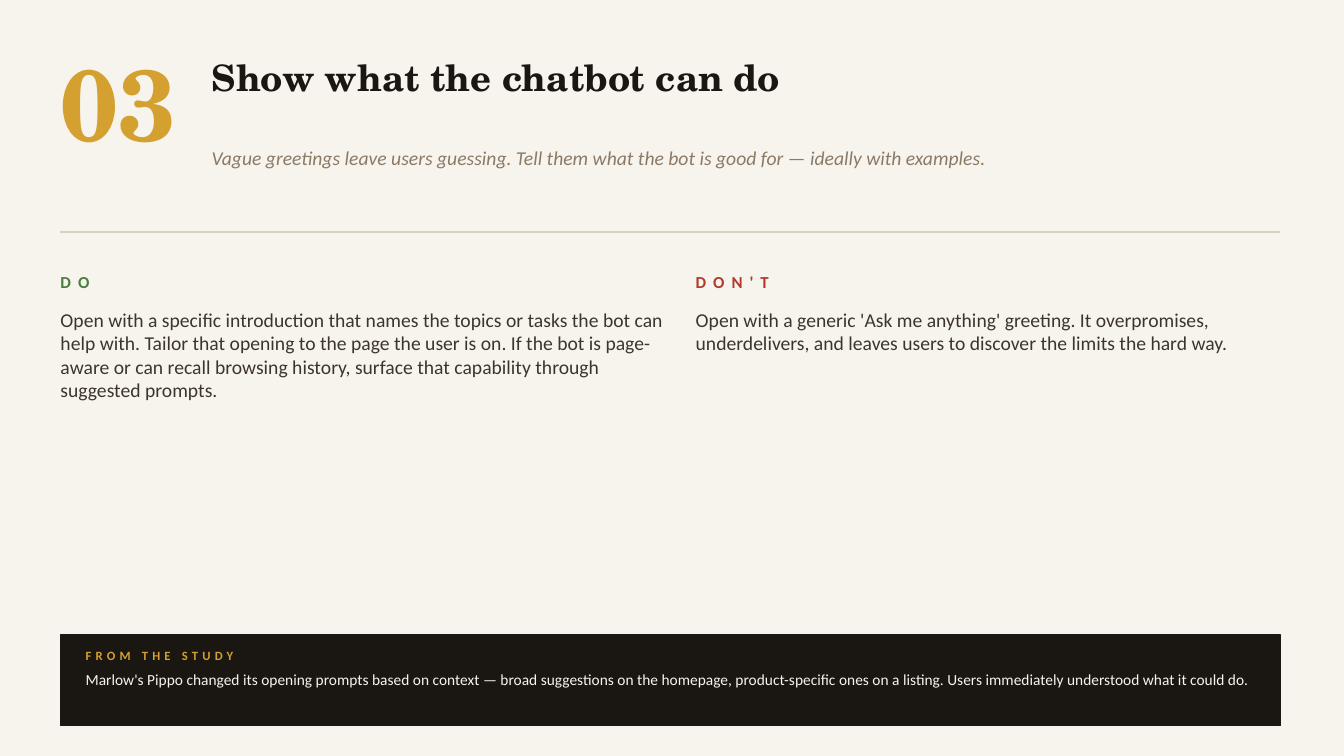
from dataclasses import dataclass

from lxml import etree
from pptx import Presentation
from pptx.dml.color import RGBColor
from pptx.enum import shapes, text
from pptx.oxml import ns
from pptx.util import Inches, Pt

CREAM = RGBColor(0xF7, 0xF4, 0xEE)
INK = RGBColor(0x1A, 0x16, 0x12)
GOLD = RGBColor(0xD4, 0xA0, 0x30)
TAUPE = RGBColor(0x8A, 0x7A, 0x66)
RULE = RGBColor(0xD8, 0xCF, 0xC0)
BROWN = RGBColor(0x3D, 0x35, 0x2D)
GREEN = RGBColor(0x4A, 0x7D, 0x3F)
RED = RGBColor(0xB3, 0x3A, 0x2A)

SERIF = "TeX Gyre Schola"
SANS = "Calibri"
MARGIN = 0.6
HEADING_LEFT = 2.1
CONTENT_WIDTH = 12.1
COLUMN_WIDTH = 6
COLUMN_STEP = 6.3
STUDY_LEFT = 0.85


@dataclass(frozen=True)
class Advice:
    label: str
    color: RGBColor
    body: str
    label_idx: int
    body_idx: int


ADVICE = (
    Advice("DO", GREEN,
           "Open with a specific introduction that names the topics or tasks the bot can "
           "help with. Tailor that opening to the page the user is on. If the bot is "
           "page-aware or can recall browsing history, surface that capability through "
           "suggested prompts.", 1, 2),
    Advice("DON'T", RED,
           "Open with a generic 'Ask me anything' greeting. It overpromises, "
           "underdelivers, and leaves users to discover the limits the hard way.", 3, 4),
)


def write(slide, words: str, left: float, top: float, width: float, height: float, *,
          size: float, color: RGBColor, font: str = SANS, bold: bool = False,
          italic: bool = False, tracking: float = 0, after: float = 0,
          middle: bool = False, holder=None) -> None:
    """Put formatted text in the given placeholder, or in a new text box."""
    area = [Inches(length) for length in (left, top, width, height)]
    if holder is None:
        holder = slide.shapes.add_textbox(*area)
    else:
        holder.left, holder.top, holder.width, holder.height = area

    frame = holder.text_frame
    frame.margin_left = frame.margin_right = frame.margin_top = frame.margin_bottom = 0
    frame.word_wrap = True
    frame.auto_size = text.MSO_AUTO_SIZE.NONE
    frame.vertical_anchor = text.MSO_ANCHOR.MIDDLE if middle else text.MSO_ANCHOR.TOP

    paragraph = frame.paragraphs[0]
    properties = paragraph._p.get_or_add_pPr()
    properties.set("marL", "0")
    properties.set("indent", "0")
    etree.SubElement(properties, ns.qn("a:buNone"))
    paragraph.alignment = text.PP_ALIGN.LEFT
    paragraph.space_before = Pt(0)
    paragraph.space_after = Pt(after)

    run = paragraph.add_run()
    run.text = words
    run.font.name = font
    run.font.size = Pt(size)
    run.font.bold = bold
    run.font.italic = italic
    run.font.color.rgb = color
    if tracking:
        run._r.get_or_add_rPr().set("spc", str(round(tracking * 100)))


def draw_heading(slide) -> None:
    write(slide, "03", MARGIN, 0.4, 1.5, 1.2, size=72, color=GOLD, font=SERIF, bold=True)
    write(slide, "Show what the chatbot can do", HEADING_LEFT, 0.55, 10.6, 1.1,
          size=26, color=INK, font=SERIF, bold=True, holder=slide.shapes.title)
    write(slide, "Vague greetings leave users guessing. Tell them what the bot is good for "
          "— ideally with examples.", HEADING_LEFT, 1.45, 10.6, 0.6,
          size=14, color=TAUPE, italic=True)

    divider = slide.shapes.add_connector(
        shapes.MSO_CONNECTOR.STRAIGHT, Inches(MARGIN), Inches(2.3),
        Inches(MARGIN + CONTENT_WIDTH), Inches(2.3))
    divider.line.color.rgb = RULE
    divider.line.width = Pt(1)
    etree.SubElement(divider._element.spPr, ns.qn("a:effectLst"))


def draw_advice(slide, advice: Advice, left: float) -> None:
    holders = {holder.placeholder_format.idx: holder for holder in slide.placeholders}
    write(slide, advice.label, left, 2.6, COLUMN_WIDTH, 0.4, size=12, color=advice.color,
          bold=True, tracking=5, middle=True, holder=holders[advice.label_idx])
    write(slide, advice.body, left, 3.05, COLUMN_WIDTH, 3.1, size=14, color=BROWN,
          after=8, holder=holders[advice.body_idx])


def draw_study(slide) -> None:
    panel = slide.shapes.add_shape(
        shapes.MSO_SHAPE.RECTANGLE, Inches(MARGIN), Inches(6.3),
        Inches(CONTENT_WIDTH), Inches(0.9))
    panel.shadow.inherit = False
    panel.fill.solid()
    panel.fill.fore_color.rgb = INK
    panel.line.color.rgb = INK
    panel.line.width = Pt(1)

    write(slide, "FROM THE STUDY", STUDY_LEFT, 6.38, 2.5, 0.25, size=9, color=GOLD,
          bold=True, tracking=3, middle=True)
    write(slide, "Marlow's Pippo changed its opening prompts based on context — broad "
          "suggestions on the homepage, product-specific ones on a listing. Users "
          "immediately understood what it could do.", STUDY_LEFT, 6.65, 11.6, 0.5,
          size=11, color=CREAM)


def main() -> None:
    deck = Presentation()
    deck.slide_width, deck.slide_height = Inches(13.33), Inches(7.5)
    slide = deck.slides.add_slide(deck.slide_layouts.get_by_name("Comparison"))
    slide.background.fill.solid()
    slide.background.fill.fore_color.rgb = CREAM

    draw_heading(slide)
    for column, advice in enumerate(ADVICE):
        draw_advice(slide, advice, MARGIN + column * COLUMN_STEP)
    draw_study(slide)
    deck.save("out.pptx")


if __name__ == "__main__":
    main()
